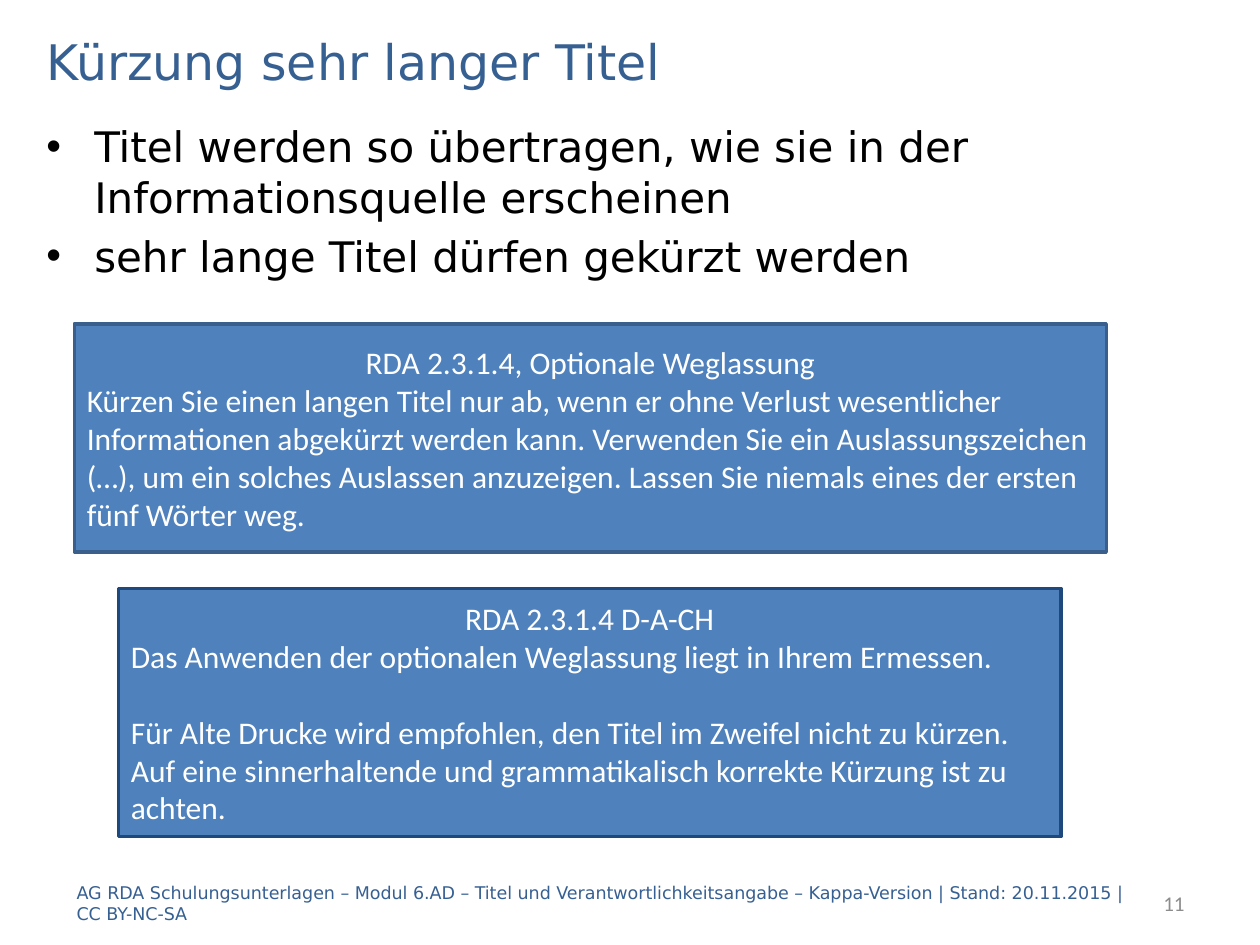
"""Build the slide on shortening very long titles."""
import pptx
import pptx.dml.color
import pptx.enum.shapes
import pptx.enum.text
import pptx.util
from lxml import etree
from pptx.util import Inches, Pt

ALIGN = pptx.enum.text.PP_ALIGN
ANCHOR = pptx.enum.text.MSO_ANCHOR
HEADING_FONT, BOX_FONT = "DejaVu Sans", "Calibri"
BLUE, BOX_FILL, WHITE, BLACK, GREY = "376092", "4F81BD", "FFFFFF", "000000", "8C8C8C"

TITLE = "Kürzung sehr langer Titel"
BULLETS = [
    "Titel werden so übertragen, wie sie in der Informationsquelle erscheinen",
    "sehr lange Titel dürfen gekürzt werden",
]
RULE_BOXES = [
    {
        "at": (0.59, 2.57, 8.19, 1.81),
        "line": "3A5F8C",
        "heading": "RDA 2.3.1.4, Optionale Weglassung",
        "body": [
            "Kürzen Sie einen langen Titel nur ab, wenn er ohne Verlust wesentlicher "
            "Informationen abgekürzt werden kann. Verwenden Sie ein Auslassungszeichen "
            "(…), um ein solches Auslassen anzuzeigen. Lassen Sie niemals eines der "
            "ersten fünf Wörter weg.",
        ],
    },
    {
        "at": (0.94, 4.67, 7.48, 1.97),
        "line": "1F497D",
        "heading": "RDA 2.3.1.4 D-A-CH",
        "body": [
            "Das Anwenden der optionalen Weglassung liegt in Ihrem Ermessen.",
            "Für Alte Drucke wird empfohlen, den Titel im Zweifel nicht zu kürzen. "
            "Auf eine sinnerhaltende und grammatikalisch korrekte Kürzung ist zu achten.",
        ],
    },
]
FOOTER = (
    "AG RDA Schulungsunterlagen – Modul 6.AD – Titel und Verantwortlichkeitsangabe – "
    "Kappa-Version | Stand: 20.11.2015 | CC BY-NC-SA"
)
PAGE_NUMBER = "11"


def rgb(value):
    """Turn a hex string into a colour."""
    return pptx.dml.color.RGBColor.from_string(value)


def add_text(frame, text, *, size, font, color, align=ALIGN.LEFT, before=0, bullet=False):
    """Add one formatted paragraph to a text frame."""
    paragraph = frame.paragraphs[0] if not frame.text else frame.add_paragraph()
    paragraph.alignment = align
    paragraph.space_before = Pt(before)
    run = paragraph.add_run()
    run.text = text
    run.font.size = Pt(size)
    run.font.name = font
    run.font.color.rgb = rgb(color)
    if bullet:
        properties = paragraph._p.get_or_add_pPr()
        properties.set("marL", str(Inches(0.38)))
        properties.set("indent", str(Inches(-0.38)))
        namespace = pptx.oxml.ns.qn
        etree.SubElement(properties, namespace("a:buFont")).set("typeface", "Arial")
        etree.SubElement(properties, namespace("a:buChar")).set("char", "•")


def add_text_box(slide, at, anchor=ANCHOR.MIDDLE):
    """Add a wrapping text box and return its text frame."""
    frame = slide.shapes.add_textbox(*map(Inches, at)).text_frame
    frame.word_wrap = True
    frame.vertical_anchor = anchor
    return frame


def add_rule_box(slide, box):
    """Add a filled rectangle with a centred heading and its rule text."""
    shape = slide.shapes.add_shape(
        pptx.enum.shapes.MSO_SHAPE.RECTANGLE, *map(Inches, box["at"])
    )
    shape.shadow.inherit = False
    shape.fill.solid()
    shape.fill.fore_color.rgb = rgb(BOX_FILL)
    shape.line.color.rgb = rgb(box["line"])
    shape.line.width = Pt(2)
    frame = shape.text_frame
    frame.word_wrap = True
    frame.vertical_anchor = ANCHOR.MIDDLE
    style = {"size": 18, "font": BOX_FONT, "color": WHITE}
    add_text(frame, box["heading"], align=ALIGN.CENTER, **style)
    for index, text in enumerate(box["body"]):
        add_text(frame, text, before=22 if index else 0, **style)


def main():
    """Create and save the presentation."""
    presentation = pptx.Presentation()
    presentation.slide_width, presentation.slide_height = Inches(10), Inches(7.5)
    slide = presentation.slides.add_slide(presentation.slide_layouts[6])

    title = add_text_box(slide, (0.27, 0.2, 9.45, 0.56))
    add_text(title, TITLE, size=28, font=HEADING_FONT, color=BLUE)

    body = add_text_box(slide, (0.27, 0.91, 9.45, 5.98), ANCHOR.TOP)
    for text in BULLETS:
        add_text(body, text, size=24, font=HEADING_FONT, color=BLACK, before=4.8, bullet=True)

    for box in RULE_BOXES:
        add_rule_box(slide, box)

    footer = add_text_box(slide, (0.51, 6.97, 8.66, 0.4))
    add_text(footer, FOOTER, size=10, font=HEADING_FONT, color=BLUE)
    number = add_text_box(slide, (7.91, 6.97, 1.59, 0.4))
    add_text(number, PAGE_NUMBER, size=12, font=BOX_FONT, color=GREY, align=ALIGN.RIGHT)

    presentation.save("out.pptx")


if __name__ == "__main__":
    main()
